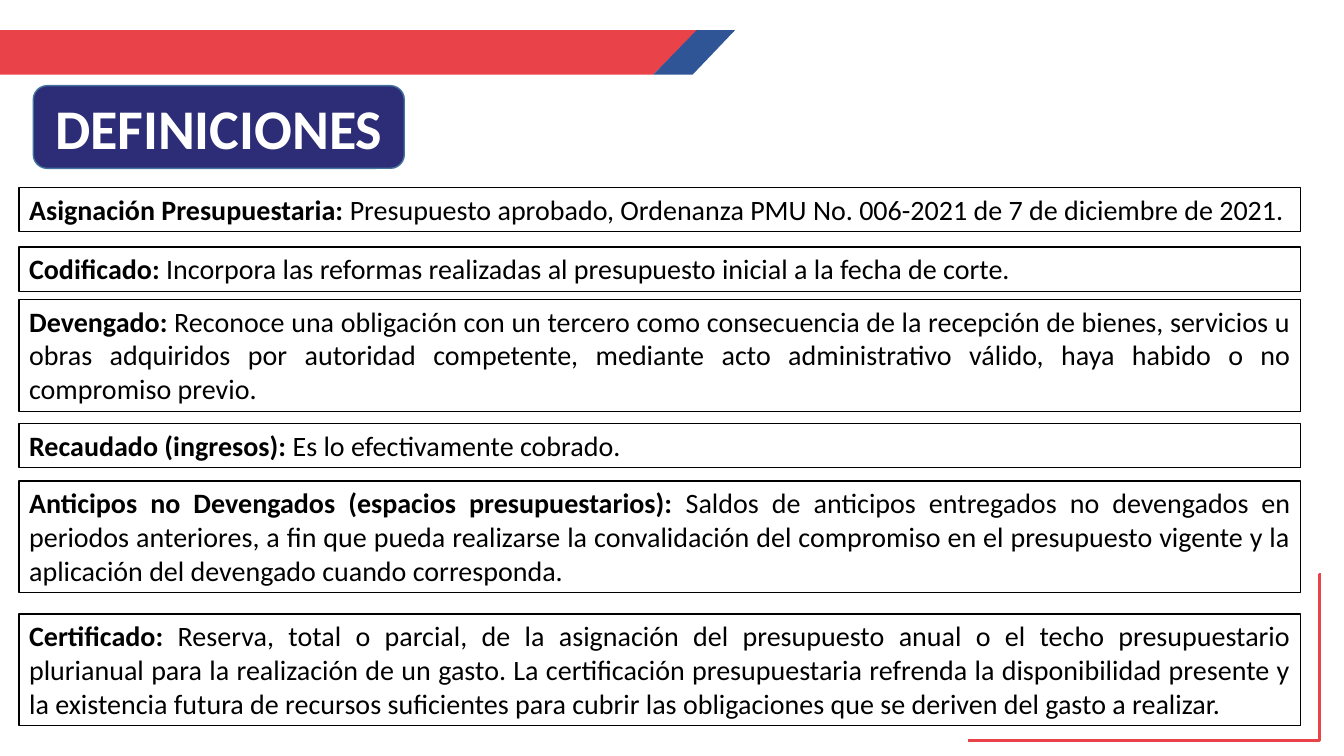
from dataclasses import dataclass

from lxml import etree
from pptx import Presentation
from pptx.dml.color import RGBColor
from pptx.enum.shapes import MSO_CONNECTOR, MSO_SHAPE
from pptx.enum.text import MSO_ANCHOR, MSO_AUTO_SIZE, PP_ALIGN
from pptx.oxml.ns import qn
from pptx.util import Inches, Pt

ELBOW = MSO_CONNECTOR.ELBOW
RECTANGLE = MSO_SHAPE.RECTANGLE
ROUNDED_PROCESS = MSO_SHAPE.FLOWCHART_ALTERNATE_PROCESS
MIDDLE, TOP = MSO_ANCHOR.MIDDLE, MSO_ANCHOR.TOP
CENTER, JUSTIFY = PP_ALIGN.CENTER, PP_ALIGN.JUSTIFY
GROW = MSO_AUTO_SIZE.SHAPE_TO_FIT_TEXT


@dataclass(frozen=True)
class Theme:
    font: str = "Calibri"
    title_size: int = 40
    body_size: int = 20
    red: str = "E94349"
    blue: str = "2F5597"
    navy: str = "2C2D76"
    title_border: str = "43739E"
    white: str = "FFFFFF"
    black: str = "000000"


BOX_LEFT, BOX_WIDTH = 0.19, 12.71
BOX_HEIGHTS = {1: 0.44, 3: 1.11}  # by number of text lines

# top, text lines, term, meaning
DEFINITIONS = [
    (1.86, 1, "Asignación Presupuestaria: ",
     "Presupuesto aprobado, Ordenanza PMU No. 006-2021 de 7 de diciembre de 2021."),
    (2.45, 1, "Codificado: ",
     "Incorpora las reformas realizadas al presupuesto inicial a la fecha de corte."),
    (2.97, 3, "Devengado: ",
     "Reconoce una obligación con un tercero como consecuencia de la recepción de "
     "bienes, servicios u obras adquiridos por autoridad competente, mediante acto "
     "administrativo válido, haya habido o no compromiso previo."),
    (4.2, 1, "Recaudado (ingresos): ", "Es lo efectivamente cobrado."),
    (4.77, 3, "Anticipos no Devengados (espacios presupuestarios): ",
     "Saldos de anticipos entregados no devengados en periodos anteriores, a fin que "
     "pueda realizarse la convalidación del compromiso en el presupuesto vigente y la "
     "aplicación del devengado cuando corresponda."),
    (6.09, 3, "Certificado: ",
     "Reserva, total o parcial, de la asignación del presupuesto anual o el techo "
     "presupuestario plurianual para la realización de un gasto. La certificación "
     "presupuestaria refrenda la disponibilidad presente y la existencia futura de "
     "recursos suficientes para cubrir las obligaciones que se deriven del gasto a "
     "realizar."),
]


class SlideBuilder:
    def __init__(self, slide, theme):
        self.slide = slide
        self.theme = theme

    def band(self, points, color):
        corners = [(Inches(x), Inches(y)) for x, y in points]
        builder = self.slide.shapes.build_freeform(*corners[0])
        builder.add_line_segments(corners[1:], close=True)
        shape = builder.convert_to_shape()
        shape.shadow.inherit = False
        shape.fill.solid()
        shape.fill.fore_color.rgb = RGBColor.from_string(color)
        shape.line.fill.background()

    def corner_line(self, start, end, bend):
        """Draw an elbow whose bend lies at the given share of its width."""
        points = [Inches(value) for value in (*start, *end)]
        connector = self.slide.shapes.add_connector(ELBOW, *points)
        connector.line.color.rgb = RGBColor.from_string(self.theme.red)
        connector.line.width = Pt(2.25)
        properties = connector._element.spPr
        guides = properties.find(qn("a:prstGeom")).get_or_add_avLst()
        etree.SubElement(guides, qn("a:gd"), name="adj1", fmla=f"val {round(bend * 100000)}")
        etree.SubElement(properties, qn("a:effectLst"))

    def box(self, kind, bounds, fill, border, anchor):
        shape = self.slide.shapes.add_shape(kind, *[Inches(value) for value in bounds])
        shape.shadow.inherit = False
        shape.fill.solid()
        shape.fill.fore_color.rgb = RGBColor.from_string(fill)
        shape.line.color.rgb = RGBColor.from_string(border)
        shape.line.width = Pt(1)
        shape.text_frame.word_wrap = True
        shape.text_frame.vertical_anchor = anchor
        return shape

    def style_run(self, run, size, color, bold):
        run.font.name = self.theme.font
        run.font.size = Pt(size)
        run.font.bold = bold
        run.font.color.rgb = RGBColor.from_string(color)

    def title(self, text, bounds):
        theme = self.theme
        shape = self.box(ROUNDED_PROCESS, bounds, theme.navy, theme.title_border, MIDDLE)
        paragraph = shape.text_frame.paragraphs[0]
        paragraph.text = text
        paragraph.alignment = CENTER
        self.style_run(paragraph.runs[0], theme.title_size, theme.white, True)

    def definition(self, top, lines, term, meaning):
        theme = self.theme
        bounds = (BOX_LEFT, top, BOX_WIDTH, BOX_HEIGHTS[lines])
        shape = self.box(RECTANGLE, bounds, theme.white, theme.black, TOP)
        shape.text_frame.auto_size = GROW
        paragraph = shape.text_frame.paragraphs[0]
        paragraph.text = term
        paragraph.add_run().text = meaning
        paragraph.alignment = JUSTIFY
        for run, bold in zip(paragraph.runs, (True, False)):
            self.style_run(run, theme.body_size, theme.black, bold)


def main():
    presentation = Presentation()
    presentation.slide_width = Inches(13.33)
    presentation.slide_height = Inches(7.5)
    theme = Theme()
    slide = presentation.slides.add_slide(presentation.slide_layouts[6])
    builder = SlideBuilder(slide, theme)

    builder.band([(0, 0.3), (6.92, 0.3), (6.48, 0.74), (0, 0.74)], theme.red)
    builder.band([(6.91, 0.3), (7.29, 0.3), (6.87, 0.74), (6.48, 0.74)], theme.blue)
    builder.corner_line((9.6, 7.35), (13.1, 5.7), bend=0.996)
    builder.title("DEFINICIONES", (0.33, 0.85, 3.68, 0.82))
    for definition in DEFINITIONS:
        builder.definition(*definition)

    presentation.save("out.pptx")


if __name__ == "__main__":
    main()
